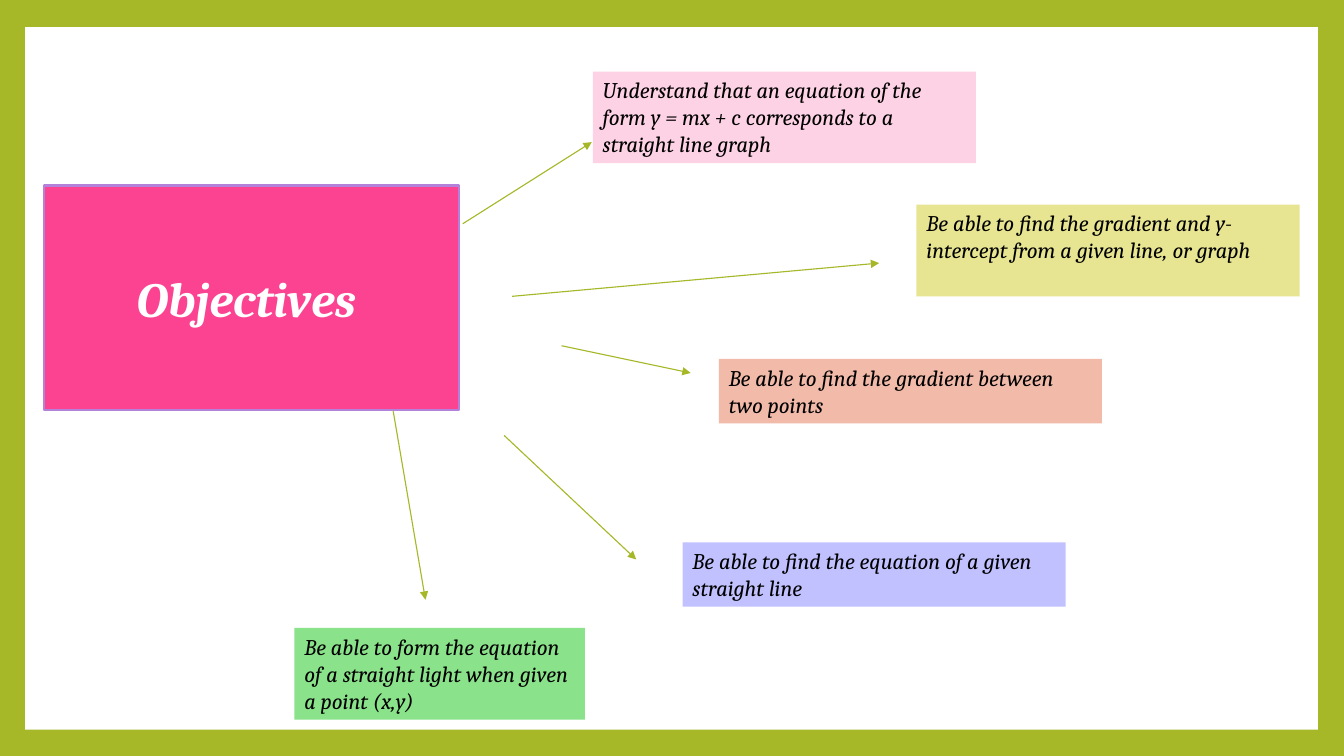
from dataclasses import dataclass

from lxml.etree import SubElement
from pptx import Presentation
from pptx.dml.color import RGBColor
from pptx.enum.shapes import MSO_CONNECTOR, MSO_SHAPE
from pptx.enum.text import MSO_ANCHOR, MSO_AUTO_SIZE, PP_ALIGN
from pptx.oxml.ns import qn
from pptx.util import Pt

EMU_PER_PX = 9144  # 100 px to the inch


@dataclass(frozen=True)
class Theme:
    font: str = "Cambria"
    title_size: float = 35
    body_size: float = 16
    arrow_width: float = 0.79
    outline_width: float = 1.5
    green: str = "A6B727"
    white: str = "FFFFFF"
    black: str = "000000"
    pink: str = "FB4392"
    violet: str = "B381D9"
    pale_pink: str = "FED2E5"
    pale_yellow: str = "E7E591"
    pale_blue: str = "C1C1FF"
    pale_green: str = "8AE28A"
    pale_orange: str = "F2BAA9"


THEME = Theme()


def px(*lengths):
    return [length * EMU_PER_PX for length in lengths]


def write(frame, text, size, color, bold=False):
    """Put one italic run into the first paragraph and return the paragraph."""
    frame.word_wrap = True
    frame.auto_size = MSO_AUTO_SIZE.NONE
    paragraph = frame.paragraphs[0]
    run = paragraph.add_run()
    run.text = text
    run.font.name = THEME.font
    run.font.size = Pt(size)
    run.font.bold = bold
    run.font.italic = True
    run.font.color.rgb = RGBColor.from_string(color)
    return paragraph


# Text, fill, box (left, top, width, height), arrow (from x, y, to x, y)
OBJECTIVES = [
    ("Understand that an equation of the form y = mx + c corresponds to a straight line graph",
     THEME.pale_pink, (588, 71, 380, 91), (459, 222, 587, 141)),
    ("Be able to find the gradient and y-intercept from a given line, or graph",
     THEME.pale_yellow, (909, 203, 380, 91), (508, 294, 872, 261)),
    ("Be able to find the equation of a given straight line",
     THEME.pale_blue, (677, 538, 380, 64), (500, 432, 631, 555)),
    ("Be able to form the equation of a straight light when given a point (x,y)",
     THEME.pale_green, (292, 623, 288, 91), (390, 408, 422, 595)),
    ("Be able to find the gradient between two points",
     THEME.pale_orange, (713, 356, 380, 64), (557, 343, 685, 370)),
]

deck = Presentation()
deck.slide_width, deck.slide_height = px(1333, 750)
slide = deck.slides.add_slide(deck.slide_layouts[5])

# Green border around a white panel
slide.background.fill.solid()
slide.background.fill.fore_color.rgb = RGBColor.from_string(THEME.green)
panel = slide.shapes.add_shape(MSO_SHAPE.RECTANGLE, *px(25, 27, 1282, 697))
panel.shadow.inherit = False
panel.fill.solid()
panel.fill.fore_color.rgb = RGBColor.from_string(THEME.white)
panel.line.fill.background()

# Each objective is an arrow grouped with its box
for text, tint, box, arrow in OBJECTIVES:
    objective = slide.shapes.add_group_shape()

    pointer = objective.shapes.add_connector(MSO_CONNECTOR.STRAIGHT, *px(*arrow))
    pointer.line.color.rgb = RGBColor.from_string(THEME.green)
    pointer.line.width = Pt(THEME.arrow_width)
    SubElement(pointer.line._get_or_add_ln(), qn("a:tailEnd"), type="triangle")
    SubElement(pointer._element.spPr, qn("a:effectLst"))

    card = objective.shapes.add_textbox(*px(*box))
    card.fill.solid()
    card.fill.fore_color.rgb = RGBColor.from_string(tint)
    write(card.text_frame, text, THEME.body_size, THEME.black)

# The title sits in an ellipse, in front of the panel
title = slide.shapes.title
title.left, title.top, title.width, title.height = px(44, 184, 411, 223)
ellipse = SubElement(title._element.spPr, qn("a:prstGeom"), prst="ellipse")
SubElement(ellipse, qn("a:avLst"))
title.fill.solid()
title.fill.fore_color.rgb = RGBColor.from_string(THEME.pink)
title.line.color.rgb = RGBColor.from_string(THEME.violet)
title.line.width = Pt(THEME.outline_width)
title.text_frame.vertical_anchor = MSO_ANCHOR.MIDDLE
heading = write(title.text_frame, "Objectives ", THEME.title_size, THEME.white, bold=True)
heading.alignment = PP_ALIGN.CENTER
slide.shapes._spTree.append(title._element)

deck.save("out.pptx")
